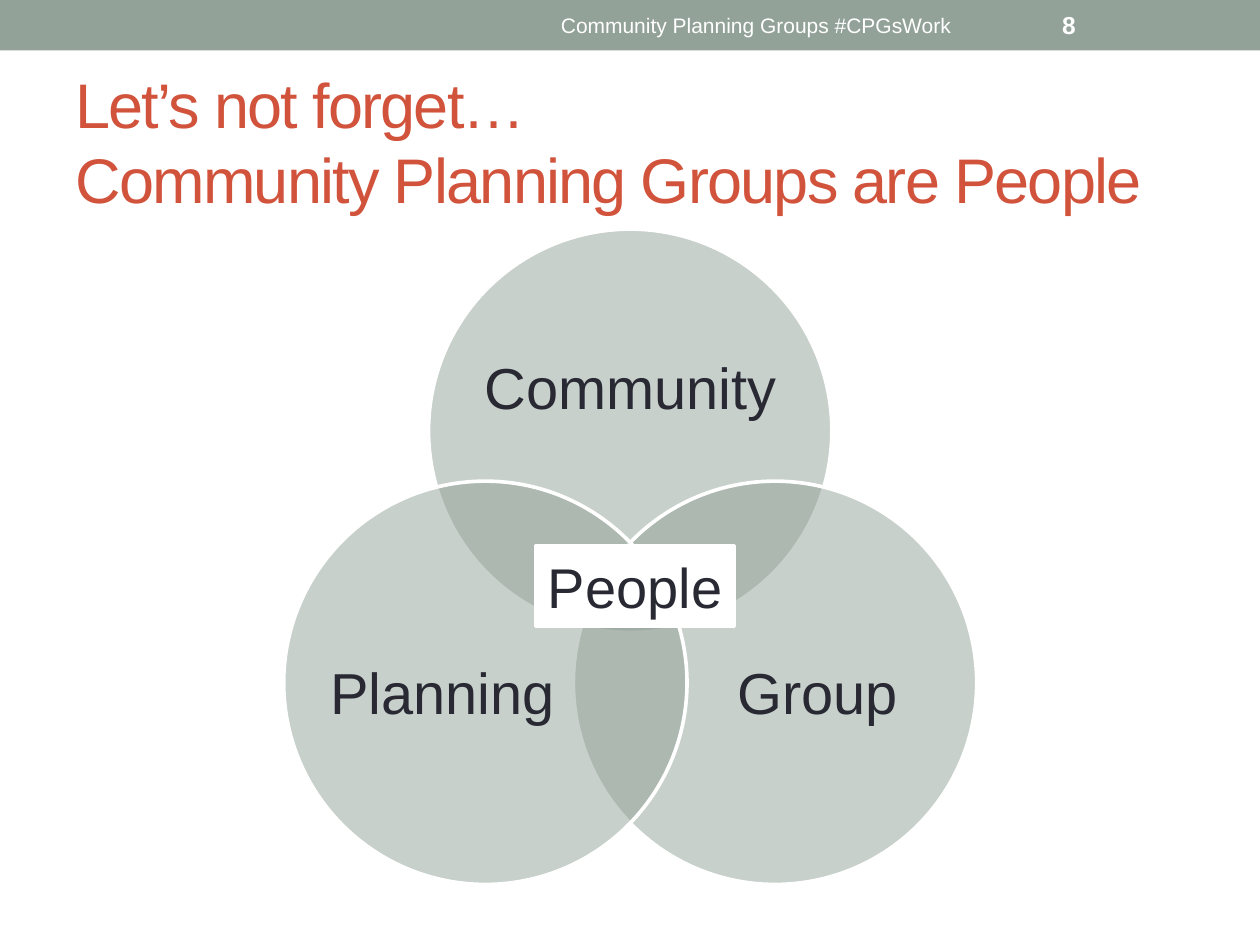
from pptx import Presentation
from pptx.dml.color import RGBColor
from pptx.enum.shapes import MSO_SHAPE as Preset
from pptx.enum.text import MSO_ANCHOR as Anchor, PP_ALIGN as Align
from pptx.oxml.ns import qn
from pptx.util import Cm, Pt
from lxml import etree

SAGE = RGBColor(0x93, 0xA2, 0x99)
RUST = RGBColor(0xD2, 0x53, 0x3C)
INK = RGBColor(0x29, 0x29, 0x34)
WHITE = RGBColor(0xFF, 0xFF, 0xFF)

deck = Presentation()
deck.slide_width, deck.slide_height = Cm(25.4), Cm(19.05)
slide = deck.slides.add_slide(deck.slide_layouts[6])


def add_panel(preset, left, top, width, height, fill, line_width=0):
    panel = slide.shapes.add_shape(preset, Cm(left), Cm(top), Cm(width), Cm(height))
    panel.shadow.inherit = False
    panel.fill.solid()
    panel.fill.fore_color.rgb = fill
    if line_width:
        panel.line.color.rgb = WHITE
        panel.line.width = Pt(line_width)
    else:
        panel.line.fill.background()
    return panel


def write(frame, lines, size, color, align=Align.CENTER, bold=False):
    frame.word_wrap = True
    frame.vertical_anchor = Anchor.MIDDLE
    paragraph = frame.paragraphs[0]
    paragraph.alignment = align
    for index, line in enumerate(lines):
        if index:
            paragraph.add_line_break()
        run = paragraph.add_run()
        run.text = line
        run.font.name = "Arial"
        run.font.size = Pt(size)
        run.font.bold = bold
        run.font.color.rgb = color
    return paragraph


add_panel(Preset.RECTANGLE, 0, 0, 25.4, 1.02, SAGE)

title = slide.shapes.add_textbox(Cm(1.27), Cm(1.47), Cm(22.86), Cm(2.74))
heading = write(title.text_frame,
                ["Let’s not forget…", "Community Planning Groups are People"],
                36, RUST, Align.LEFT)
for run in heading.runs:
    run.font._element.set("spc", "-100")

DIAMETER = 8.13
circles = [
    ("Community", 8.64, 4.62, (9.73, 6.05, 5.97, 3.66)),
    ("Group", 11.56, 9.7, (14.05, 11.79, 4.88, 4.47)),
    ("Planning", 5.72, 9.7, (6.48, 11.79, 4.88, 4.47)),
]
for word, left, top, label_box in circles:
    circle = add_panel(Preset.OVAL, left, top, DIAMETER, DIAMETER, SAGE, 2.08)
    tint = circle.fill._xPr.find(qn("a:solidFill"))[0]
    etree.SubElement(tint, qn("a:alpha"), val="50000")
    label = slide.shapes.add_textbox(*map(Cm, label_box)).text_frame
    label.margin_left = label.margin_right = label.margin_top = label.margin_bottom = 0
    write(label, [word], 33, INK).line_spacing = 0.9

footer = slide.shapes.add_textbox(Cm(9.53), Cm(0.05), Cm(11.43), Cm(0.91))
write(footer.text_frame, ["Community Planning Groups #CPGsWork"], 12, WHITE)
page_number = slide.shapes.add_textbox(Cm(21.16), Cm(0.05), Cm(2.97), Cm(0.91))
write(page_number.text_frame, ["8"], 14, WHITE, Align.LEFT, True)

people = add_panel(Preset.RECTANGLE, 10.8, 11, 4.01, 1.63, WHITE, 2)
write(people.text_frame, ["People"], 32, INK)
people.text_frame.word_wrap = False

deck.save("out.pptx")
